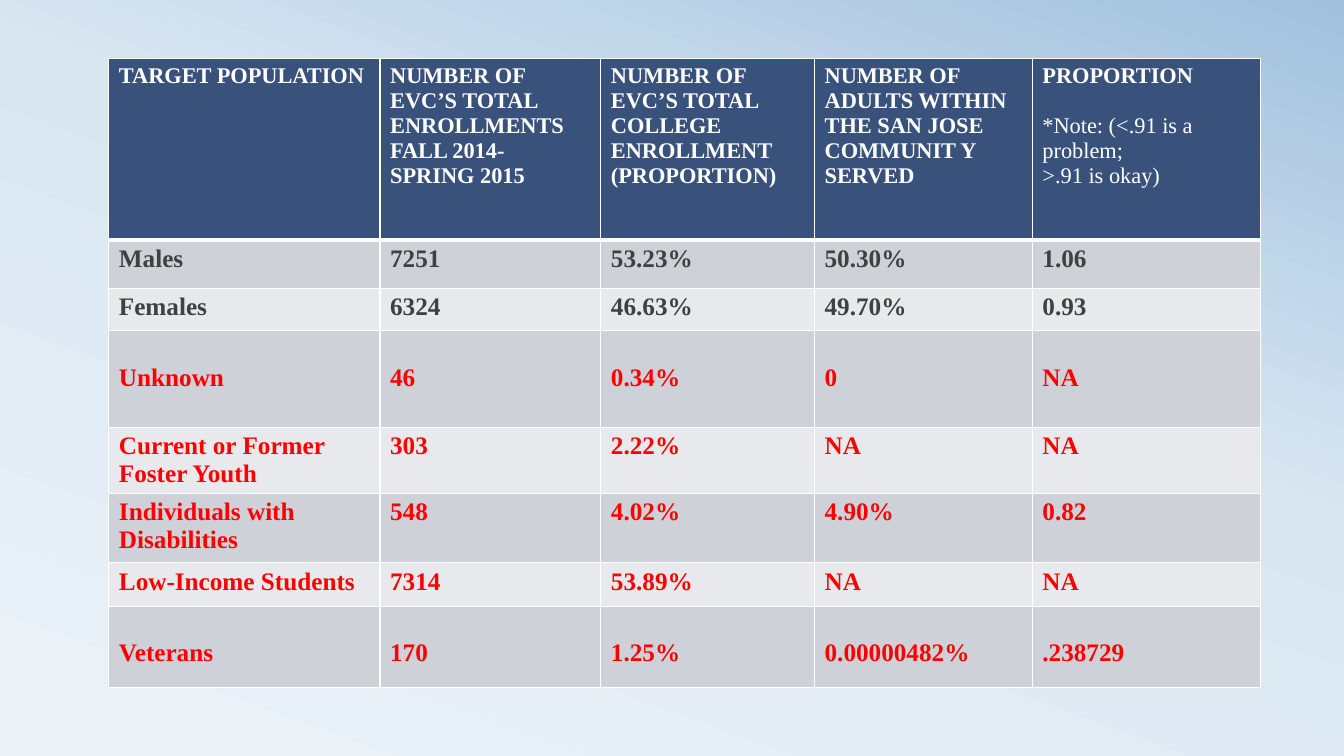
from copy import deepcopy
from dataclasses import dataclass

from lxml import etree
from pptx import Presentation
from pptx import util as u
from pptx.dml.color import RGBColor
from pptx.oxml import ns

PX = 9144


@dataclass(frozen=True)
class Theme:
    """Colours, font and type sizes of the slide."""
    font: str = "Times New Roman"
    header_size: int = 16
    body_size: int = 18
    white: str = "FFFFFF"
    header: str = "39527B"
    bands: tuple = ("CED1D7", "E8E9EC")
    ink: str = "404040"
    alert: str = "FF0000"
    backdrop: tuple = ((0, "ECF3F8"), (0.58, "D9E6F2"), (1, "A1C1DE"))
    backdrop_angle: int = 70


THEME = Theme()
COLUMNS = (269, 219, 212, 216, 226)
HEADERS = (
    "TARGET POPULATION",
    "NUMBER OF EVC’S TOTAL ENROLLMENTS\nFALL 2014- SPRING 2015",
    "NUMBER OF EVC’S TOTAL COLLEGE ENROLLMENT\n(PROPORTION)",
    "NUMBER OF ADULTS WITHIN THE SAN JOSE COMMUNIT Y SERVED",
    "PROPORTION\n*Note: (<.91 is a problem;\n>.91 is okay)",
)
HEADER_HEIGHT = 180
TOP_MARGIN, LOWERED_MARGIN = 5, 33
GROUPS = (
    (48, TOP_MARGIN, THEME.ink, ("Males", "7251", "53.23%", "50.30%", "1.06")),
    (42, TOP_MARGIN, THEME.ink, ("Females", "6324", "46.63%", "49.70%", "0.93")),
    (96, LOWERED_MARGIN, THEME.alert, ("Unknown", "46", "0.34%", "0", "NA")),
    (43, TOP_MARGIN, THEME.alert,
     ("Current or Former Foster Youth", "303", "2.22%", "NA", "NA")),
    (69, TOP_MARGIN, THEME.alert,
     ("Individuals with Disabilities", "548", "4.02%", "4.90%", "0.82")),
    (43, TOP_MARGIN, THEME.alert,
     ("Low-Income Students", "7314", "53.89%", "NA", "NA")),
    (81, LOWERED_MARGIN, THEME.alert,
     ("Veterans", "170", "1.25%", "0.00000482%", ".238729")),
)


def px(length):
    """Turn px into EMU."""
    return u.Emu(length * PX)


def paint_background(page):
    """Fill the page with the three-stop gradient."""
    fill = page.background.fill
    fill.gradient()
    fill.gradient_angle = THEME.backdrop_angle
    stop_list = next(page.element.iter(ns.qn("a:gsLst")))
    stop_list.append(deepcopy(stop_list[-1]))
    for stop, (position, colour) in zip(fill.gradient_stops, THEME.backdrop):
        stop.position = position
        stop.color.rgb = RGBColor.from_string(colour)


def set_borders(cell, top, bottom):
    """Give a cell white borders, with top and bottom widths in points."""
    properties = cell._tc.get_or_add_tcPr()
    for side, width in (("L", 1), ("R", 1), ("T", top), ("B", bottom)):
        line = etree.SubElement(properties, ns.qn(f"a:ln{side}"), w=str(u.Pt(width)))
        solid = etree.SubElement(line, ns.qn("a:solidFill"))
        etree.SubElement(solid, ns.qn("a:srgbClr"), val=THEME.white)


def write_cell(cell, words, fill, colour, size, margin=TOP_MARGIN):
    """Write bold text in a filled cell."""
    cell.fill.solid()
    cell.fill.fore_color.rgb = RGBColor.from_string(fill)
    cell.margin_top = px(margin)
    cell.text_frame.text = words
    for para in cell.text_frame.paragraphs:
        for span in para.runs:
            span.font.name = THEME.font
            span.font.size = u.Pt(size)
            span.font.bold = True
            span.font.color.rgb = RGBColor.from_string(colour)


def soften_note(cell):
    """Set the note below a heading apart in regular weight."""
    notes = cell.text_frame.paragraphs[1:]
    notes[0].space_before = u.Pt(18)
    for para in notes:
        for span in para.runs:
            span.font.bold = False


def add_population_table(page):
    """Add the table of target populations."""
    heights = (HEADER_HEIGHT, *(group[0] for group in GROUPS))
    table = page.shapes.add_table(
        len(heights), len(COLUMNS), px(108), px(58),
        px(sum(COLUMNS)), px(sum(heights))).table
    for column, width in zip(table.columns, COLUMNS):
        column.width = px(width)
    for index, (row, height) in enumerate(zip(table.rows, heights)):
        row.height = px(height)
        for cell in row.cells:
            set_borders(cell, 3 if index == 1 else 1, 3 if index == 0 else 1)
    for cell, words in zip(table.rows[0].cells, HEADERS):
        write_cell(cell, words, THEME.header, THEME.white, THEME.header_size)
    soften_note(table.cell(0, len(COLUMNS) - 1))
    for index, (_, margin, colour, values) in enumerate(GROUPS):
        for cell, words in zip(table.rows[index + 1].cells, values):
            write_cell(cell, words, THEME.bands[index % 2], colour,
                       THEME.body_size, margin)


def main():
    """Build and save the deck."""
    deck = Presentation()
    deck.slide_width, deck.slide_height = px(1333), px(750)
    page = deck.slides.add_slide(deck.slide_layouts[6])
    paint_background(page)
    add_population_table(page)
    deck.save("out.pptx")


if __name__ == "__main__":
    main()
